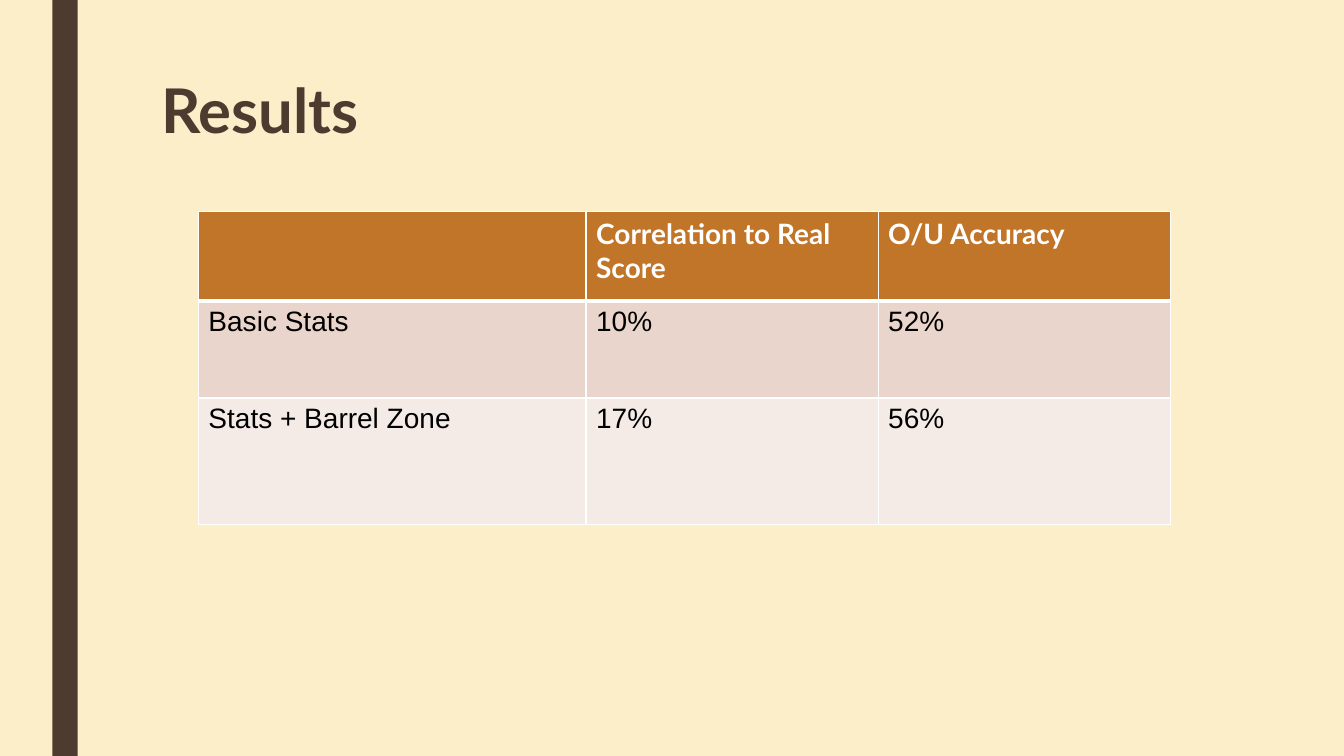
import pptx
import pptx.dml.color
import pptx.enum.shapes
import pptx.enum.text
import pptx.oxml
import pptx.oxml.ns
import pptx.util
from pptx.util import Cm

COLORS = {
    "cream": "FBEEC9",
    "brown": "4E3B30",
    "orange": "C17529",
    "rose": "E9D5CB",
    "blush": "F4EBE7",
    "white": "FFFFFF",
    "black": "000000",
}
ROWS = [
    ["", "Correlation to Real Score", "O/U Accuracy"],
    ["Basic Stats", "10%", "52%"],
    ["Stats + Barrel Zone", "17%", "56%"],
]
ROW_FILLS = ["orange", "rose", "blush"]
COL_WIDTHS = [9.77, 7.36, 7.36]
ROW_HEIGHTS = [2.26, 2.44, 3.18]


def rgb(name):
    return pptx.dml.color.RGBColor.from_string(COLORS[name])


class SlideBuilder:
    """Holds the heading and body fonts together with the slide being built."""

    heading_font = "Lato"
    body_font = "Arial"

    def __init__(self, prs):
        self.s = prs.slides.add_slide(prs.slide_layouts[5])
        self.s.background.fill.solid()
        self.s.background.fill.fore_color.rgb = rgb("cream")

    def add_run(self, p, text, size, font, color, bold):
        r = p.add_run()
        r.text = text
        r.font.size = pptx.util.Pt(size)
        r.font.name = font
        r.font.bold = bold
        r.font.color.rgb = rgb(color)

    def bar(self, left, top, width, height, color):
        sp = self.s.shapes.add_shape(
            pptx.enum.shapes.MSO_SHAPE.RECTANGLE,
            Cm(left), Cm(top), Cm(width), Cm(height))
        sp.shadow.inherit = False
        sp.fill.solid()
        sp.fill.fore_color.rgb = rgb(color)
        sp.line.fill.background()

    def title(self, text, left, top, width, height):
        sp = self.s.shapes.title
        sp.left, sp.top, sp.width, sp.height = Cm(left), Cm(top), Cm(width), Cm(height)
        tf = sp.text_frame
        tf.word_wrap = True
        tf.vertical_anchor = pptx.enum.text.MSO_ANCHOR.TOP
        p = tf.paragraphs[0]
        p.alignment = pptx.enum.text.PP_ALIGN.LEFT
        p.line_spacing = 0.89
        self.add_run(p, text, 44, self.heading_font, "brown", True)

    def border(self, cell, side, width, color="white"):
        """Draw one cell edge; add the edges before the cell fill."""
        ns = pptx.oxml.ns.nsdecls("a")
        cell._tc.get_or_add_tcPr().append(pptx.oxml.parse_xml(
            f'<a:ln{side} {ns} w="{pptx.util.Pt(width)}"><a:solidFill>'
            f'<a:srgbClr val="{COLORS[color]}"/></a:solidFill></a:ln{side}>'))

    def table(self, rows, left, top, col_widths, row_heights, row_fills):
        table = self.s.shapes.add_table(
            len(rows), len(col_widths), Cm(left), Cm(top),
            Cm(sum(col_widths)), Cm(sum(row_heights))).table
        for column, width in zip(table.columns, col_widths):
            column.width = Cm(width)
        for i, (row, height) in enumerate(zip(rows, row_heights)):
            table.rows[i].height = Cm(height)
            header = i == 0
            font = self.heading_font if header else self.body_font
            for j, text in enumerate(row):
                cell = table.cell(i, j)
                edges = {"L": 1, "R": 1, "T": 3 if i == 1 else 1, "B": 3 if header else 1}
                for side, width in edges.items():
                    self.border(cell, side, width)
                cell.fill.solid()
                cell.fill.fore_color.rgb = rgb(row_fills[i])
                if text:
                    self.add_run(cell.text_frame.paragraphs[0], text, 20, font,
                                 "white" if header else "black", header)


def main():
    prs = pptx.Presentation()
    prs.slide_width, prs.slide_height = Cm(33.87), Cm(19.05)
    slide = SlideBuilder(prs)
    slide.bar(1.32, 0, 0.64, 19.05, "brown")
    slide.title("Results", 3.81, 1.9, 26.67, 4.11)
    slide.table(ROWS, 5, 5.33, COL_WIDTHS, ROW_HEIGHTS, ROW_FILLS)
    prs.save("out.pptx")


if __name__ == "__main__":
    main()
